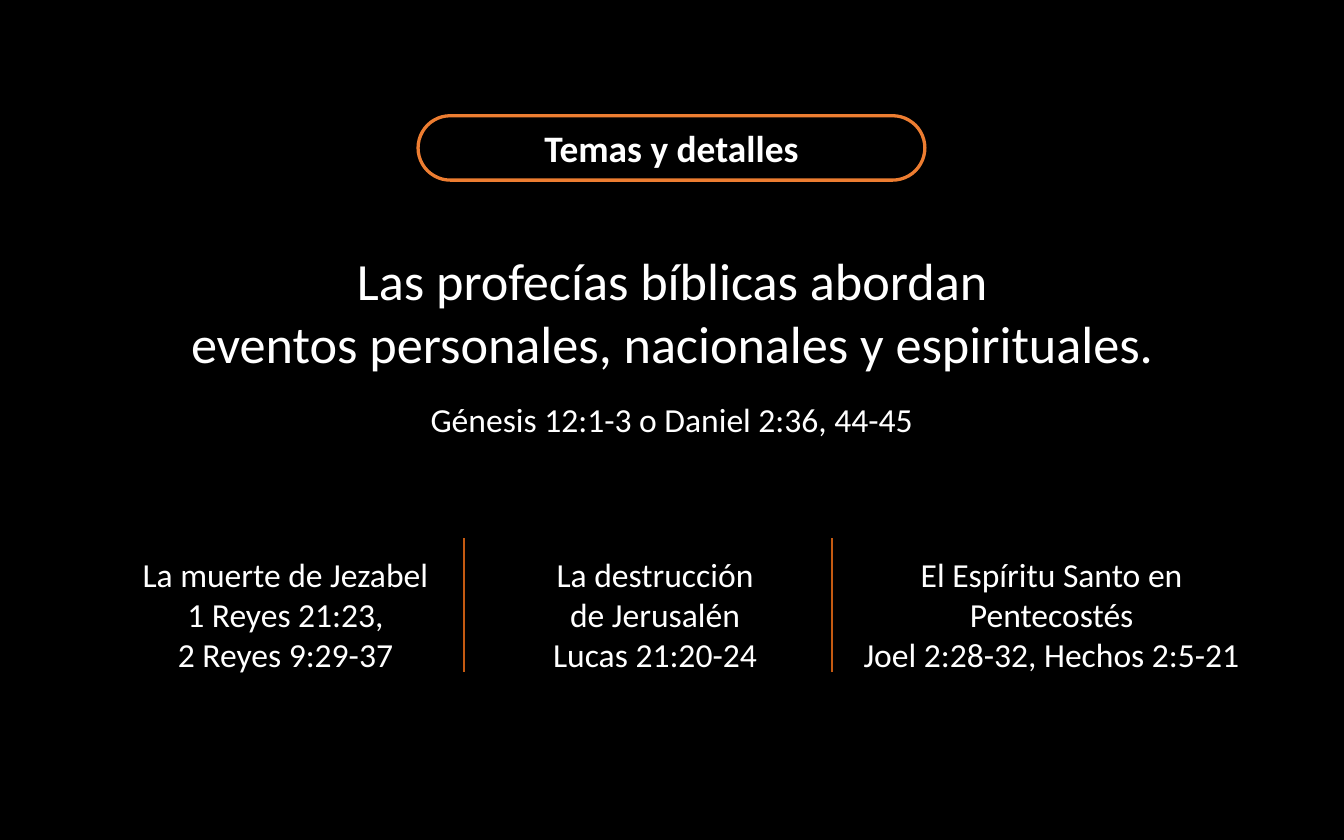
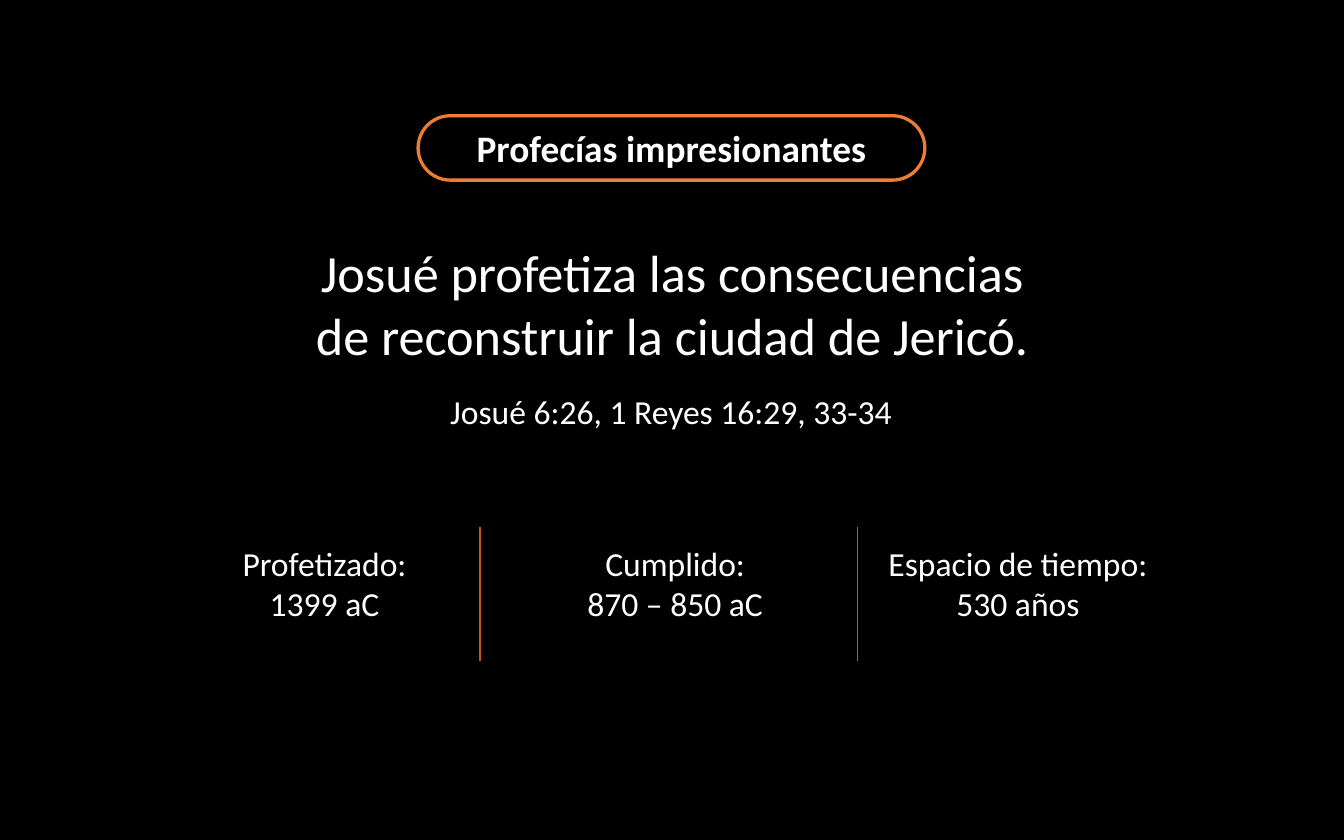
from lxml.etree import SubElement
from pptx import Presentation
from pptx.dml.color import RGBColor
from pptx.enum.shapes import MSO_CONNECTOR, MSO_SHAPE
from pptx.enum.text import MSO_ANCHOR, PP_ALIGN
from pptx.oxml.ns import qn
from pptx.util import Pt

BACKGROUND, TEXT, PILL, DIVIDER = "000000", "FFFFFF", "ED7D31", "C55A11"
FONT = "Calibri"
DIVIDER_HEIGHT, DIVIDER_RISE = 72, 5

# Boxes are (left, top, width, height); columns are (left, width, divider x, paragraphs).
# A line break inside a paragraph is written as \n.
SLIDES = [
    {
        "title": "Temas y detalles",
        "headline": "Las profecías bíblicas abordan\neventos personales, nacionales y espirituales.",
        "headline_box": (47.5, 129.6, 625, 108.7),
        "verses": "Génesis 12:1-3 o Daniel 2:36, 44-45",
        "verses_box": (169, 210.3, 382, 29),
        "columns_top": 293,
        "columns_height": 72.7,
        "columns": [
            (66.2, 173.5, 248.4, ["La muerte de Jezabel\n1 Reyes 21:23,", "2 Reyes 9:29-37"]),
            (267.8, 166.3, 445.7, ["La destrucción\nde Jerusalén", "Lucas 21:20-24"]),
            (454.3, 218.2, None, ["El Espíritu Santo en Pentecostés", "Joel 2:28-32, Hechos 2:5-21"]),
        ],
    },
    {
        "title": "Profecías impresionantes",
        "headline": "Josué profetiza las consecuencias\nde reconstruir la ciudad de Jericó.",
        "headline_box": (47.5, 125.3, 625, 75),
        "verses": "Josué 6:26, 1 Reyes 16:29, 33-34",
        "verses_box": (224.6, 205.9, 270, 29),
        "columns_top": 287.3,
        "columns_height": 51,
        "columns": [
            (90.7, 166.3, 257, ["Profetizado:", "1399 aC"]),
            (278.6, 166.3, 459.4, ["Cumplido:", "870 – 850 aC"]),
            (462.2, 166.3, None, ["Espacio de tiempo:", "530 años"]),
        ],
    },
]


def rgb(color):
    return RGBColor.from_string(color)


def write(sp, paragraphs, size, bold=False):
    """Fill a shape with centred white paragraphs."""
    tf = sp.text_frame
    tf.word_wrap = True
    for i, text in enumerate(paragraphs):
        p = tf.add_paragraph() if i else tf.paragraphs[0]
        p.alignment = PP_ALIGN.CENTER
        for j, line in enumerate(text.split("\n")):
            if j:
                p.add_line_break()
            r = p.add_run()
            r.text = line
            r.font.name = FONT
            r.font.size = Pt(size)
            r.font.bold = bold
            r.font.color.rgb = rgb(TEXT)


prs = Presentation()
prs.slide_width, prs.slide_height = Pt(720), Pt(450)

for content in SLIDES:
    s = prs.slides.add_slide(prs.slide_layouts[6])
    s.background.fill.solid()
    s.background.fill.fore_color.rgb = rgb(BACKGROUND)

    pill = s.shapes.add_shape(MSO_SHAPE.ROUNDED_RECTANGLE, Pt(224), Pt(62), Pt(271.5), Pt(34.5))
    pill.adjustments[0] = 0.5
    pill.shadow.inherit = False
    pill.fill.background()
    pill.line.color.rgb = rgb(PILL)
    pill.line.width = Pt(1.75)
    pill.text_frame.vertical_anchor = MSO_ANCHOR.MIDDLE
    write(pill, [content["title"]], 20, bold=True)

    message = s.shapes.add_group_shape()
    for name, size in (("headline", 28), ("verses", 18)):
        box = message.shapes.add_textbox(*map(Pt, content[name + "_box"]))
        write(box, [content[name]], size)

    top = content["columns_top"]
    for left, width, divider_x, paragraphs in content["columns"]:
        shapes = s.shapes.add_group_shape().shapes if divider_x else s.shapes
        box = shapes.add_textbox(Pt(left), Pt(top), Pt(width), Pt(content["columns_height"]))
        write(box, paragraphs, 18)
        if divider_x:
            line_top = top - DIVIDER_RISE
            divider = shapes.add_connector(
                MSO_CONNECTOR.STRAIGHT,
                Pt(divider_x), Pt(line_top + DIVIDER_HEIGHT), Pt(divider_x), Pt(line_top))
            divider.line.color.rgb = rgb(DIVIDER)
            divider.line.width = Pt(1)
            SubElement(divider._element.spPr, qn("a:effectLst"))

prs.save("out.pptx")
